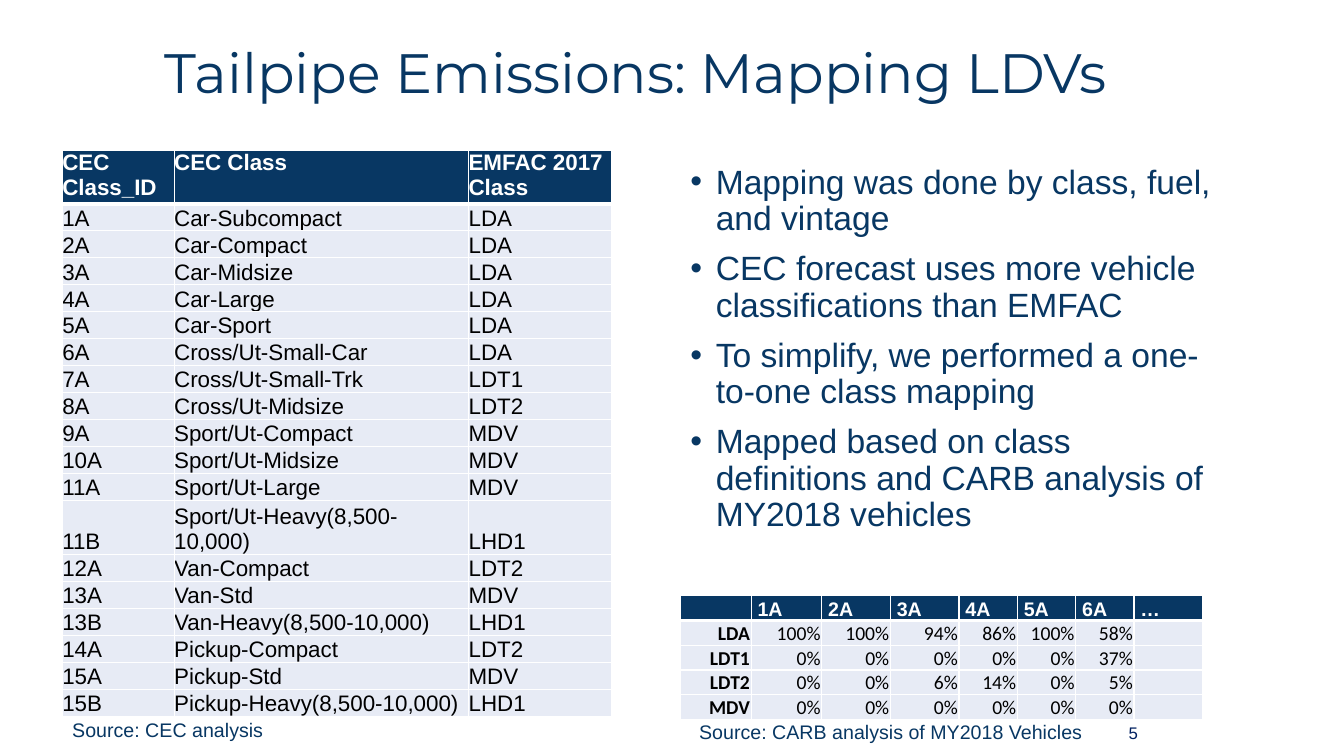
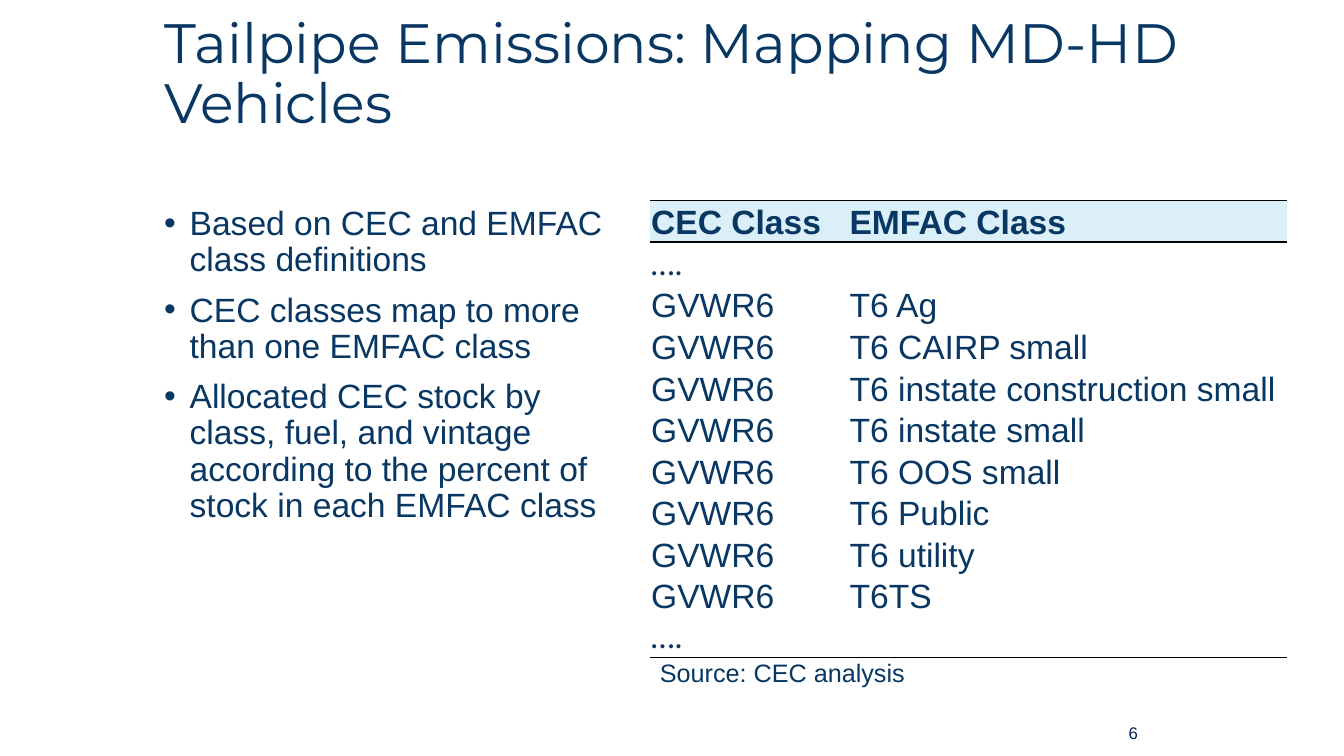
from lxml import etree
from pptx import Presentation
from pptx.dml.color import RGBColor
from pptx.enum.text import MSO_ANCHOR as Anchor, MSO_AUTO_SIZE as AutoSize, PP_ALIGN as Align
from pptx.oxml.ns import qn
from pptx.util import Cm, Pt

NAVY = RGBColor(0x08, 0x37, 0x63)
NUMBER_BLUE = RGBColor(0x00, 0x20, 0x60)
PALE_BLUE = RGBColor(0xE7, 0xEB, 0xF5)
SKY = RGBColor(0xDB, 0xEF, 0xF9)
WHITE = RGBColor(0xFF, 0xFF, 0xFF)
BLACK = RGBColor(0, 0, 0)

FIRST_NUMBER = 5
TITLE_BOX = (3.89, 0.45, 27.66, 2.9)
NUMBER_BOX = (23.93, 17.96, 5, 1.02)
PLAIN_TABLE = "{2D5ABB26-0587-4C30-8999-92F81FD0307C}"

VEHICLE_CLASSES = [
    ("CEC Class_ID", "CEC Class", "EMFAC 2017 Class"),
    ("1A", "Car-Subcompact", "LDA"),
    ("2A", "Car-Compact", "LDA"),
    ("3A", "Car-Midsize", "LDA"),
    ("4A", "Car-Large", "LDA"),
    ("5A", "Car-Sport", "LDA"),
    ("6A", "Cross/Ut-Small-Car", "LDA"),
    ("7A", "Cross/Ut-Small-Trk", "LDT1"),
    ("8A", "Cross/Ut-Midsize", "LDT2"),
    ("9A", "Sport/Ut-Compact", "MDV"),
    ("10A", "Sport/Ut-Midsize", "MDV"),
    ("11A", "Sport/Ut-Large", "MDV"),
    ("11B", "Sport/Ut-Heavy(8,500-10,000)", "LHD1"),
    ("12A", "Van-Compact", "LDT2"),
    ("13A", "Van-Std", "MDV"),
    ("13B", "Van-Heavy(8,500-10,000)", "LHD1"),
    ("14A", "Pickup-Compact", "LDT2"),
    ("15A", "Pickup-Std", "MDV"),
    ("15B", "Pickup-Heavy(8,500-10,000)", "LHD1"),
]
CLASS_SHARES = [
    ("", "1A", "2A", "3A", "4A", "5A", "6A", "…"),
    ("LDA", "100%", "100%", "94%", "86%", "100%", "58%", ""),
    ("LDT1", "0%", "0%", "0%", "0%", "0%", "37%", ""),
    ("LDT2", "0%", "0%", "6%", "14%", "0%", "5%", ""),
    ("MDV", "0%", "0%", "0%", "0%", "0%", "0%", ""),
]
TRUCK_CLASSES = [
    "T6 Ag", "T6 CAIRP small", "T6 instate construction small", "T6 instate small",
    "T6 OOS small", "T6 Public", "T6 utility", "T6TS",
]
TRUCK_ROWS = [("CEC Class", "EMFAC Class"), ("….", ""),
              *(("GVWR6", name) for name in TRUCK_CLASSES), ("….", "")]


def set_all(target, values):
    for name, value in values.items():
        setattr(target, name, value)


def set_font(font, size, color=NAVY, name="Arial", bold=False):
    set_all(font, {"size": Pt(size), "name": name, "bold": bold})
    font.color.rgb = color


def place(shape, box):
    set_all(shape, dict(zip(("left", "top", "width", "height"), map(Cm, box))))


def add_box(page, box, anchor=Anchor.TOP):
    shape = page.shapes.add_textbox(*map(Cm, box))
    set_all(shape.text_frame, {"word_wrap": True, "vertical_anchor": anchor})
    return shape.text_frame


def add_page(deck, title):
    """Add a slide with the shared title and slide number."""
    page = deck.slides.add_slide(deck.slide_layouts[5])
    heading = page.shapes.title
    place(heading, TITLE_BOX)
    set_all(heading.text_frame, {"text": title, "word_wrap": True,
                                 "auto_size": AutoSize.NONE,
                                 "vertical_anchor": Anchor.MIDDLE})
    para = heading.text_frame.paragraphs[0]
    set_all(para, {"alignment": Align.LEFT, "line_spacing": 0.9})
    set_font(para.runs[0].font, 39.6, name="Montserrat")
    add_slide_number(page, FIRST_NUMBER + len(deck.slides) - 1)
    return page


def add_slide_number(page, number):
    para = add_box(page, NUMBER_BOX, Anchor.MIDDLE).paragraphs[0]
    para.alignment = Align.RIGHT
    span = para.add_run()
    span.text = str(number)
    set_font(span.font, 12, NUMBER_BLUE)
    field = span._r
    field.tag = qn("a:fld")
    field.set("id", "{B6F15528-21DE-4FAA-801E-634DDDAF4B2B}")
    field.set("type", "slidenum")


def add_bullets(page, box, lines):
    frame = add_box(page, box)
    for index, line in enumerate(lines):
        para = frame.paragraphs[0] if index == 0 else frame.add_paragraph()
        para.line_spacing = 0.9
        if index:
            para.space_before = Pt(10)
        props = para._p.get_or_add_pPr()
        props.set("marL", str(Cm(0.64)))
        props.set("indent", str(-Cm(0.64)))
        etree.SubElement(props, qn("a:buFont")).set("typeface", "Arial")
        etree.SubElement(props, qn("a:buChar")).set("char", "•")
        span = para.add_run()
        span.text = line
        set_font(span.font, 24)


def add_source(page, box, text, size=14):
    span = add_box(page, box).paragraphs[0].add_run()
    span.text = text
    set_font(span.font, size)


def add_borders(cell, color, widths):
    """Draw the sides in widths, a dict of side letter to points."""
    props = cell._tc.get_or_add_tcPr()
    sides = [side for side in "LRTB" if side in widths]
    for index, side in enumerate(sides):
        line = etree.Element(qn(f"a:ln{side}"), w=str(Pt(widths[side])))
        fill = etree.SubElement(line, qn("a:solidFill"))
        etree.SubElement(fill, qn("a:srgbClr")).set("val", str(color))
        props.insert(index, line)


def fill_cell(cell, text, font, fill=None, anchor=Anchor.BOTTOM, align=Align.LEFT,
              inset=0.03, left=None, line=WHITE, borders=None):
    edge = Cm(inset)
    set_all(cell, {"vertical_anchor": anchor, "margin_top": edge, "margin_right": edge,
                   "margin_left": edge if left is None else Cm(left), "margin_bottom": 0})
    if fill is None:
        cell.fill.background()
    else:
        cell.fill.solid()
        cell.fill.fore_color.rgb = fill
    add_borders(cell, line, borders or {})
    para = cell.text_frame.paragraphs[0]
    para.alignment = align
    if text:
        span = para.add_run()
        span.text = text
        set_font(span.font, **font)
    else:
        etree.SubElement(para._p, qn("a:endParaRPr")).set("sz", str(font["size"] * 100))


def add_grid(page, corner, widths, heights, rows, style):
    """Add a table; style(row, column) gives the format of one cell."""
    box = (*corner, sum(widths), sum(heights))
    frame = page.shapes.add_table(len(rows), len(widths), *map(Cm, box))
    table = frame.table
    frame._element.find(".//" + qn("a:tableStyleId")).text = PLAIN_TABLE
    for column, width in zip(table.columns, widths):
        column.width = Cm(width)
    for row, height in zip(table.rows, heights):
        row.height = Cm(height)
    for r, values in enumerate(rows):
        for c, text in enumerate(values):
            fill_cell(table.cell(r, c), text, **style(r, c))


def banded_style(row):
    """Fill and white rules shared by the two tables with a navy header."""
    if row == 0:
        return {"fill": NAVY, "borders": {"L": 1, "R": 1, "T": 1, "B": 3}}
    return {"fill": PALE_BLUE, "borders": {"L": 1, "R": 1, "B": 1}}


def class_style(row, column):
    header = row == 0
    return {**banded_style(row), "inset": 0,
            "anchor": Anchor.TOP if header else Anchor.BOTTOM,
            "font": {"size": 16, "color": WHITE if header else BLACK, "bold": header}}


def share_style(row, column):
    if row == 0:
        return {**banded_style(row), "left": 0.16,
                "font": {"size": 14, "color": WHITE, "bold": True}}
    return {**banded_style(row), "align": Align.RIGHT,
            "font": {"size": 14, "color": BLACK, "name": "Calibri", "bold": column == 0}}


def truck_style(row, column):
    last = len(TRUCK_ROWS) - 1
    borders = {0: {"T": 1, "B": 1}, last: {"B": 1}}.get(row)
    name = "Calibri" if row in (1, last) else "Arial"
    return {"fill": SKY if row == 0 else None, "line": BLACK, "borders": borders,
            "font": {"size": 24, "name": name, "bold": row == 0}}


def build_light_duty(deck):
    page = add_page(deck, "Tailpipe Emissions: Mapping LDVs")
    add_bullets(page, (17.15, 4.04, 13.82, 10.87), [
        "Mapping was done by class, fuel, and vintage",
        "CEC forecast uses more vehicle classifications than EMFAC",
        "To simplify, we performed a one-to-one class mapping",
        "Mapped based on class definitions and CARB analysis of MY2018 vehicles",
    ])
    two_line_rows = ("CEC Class_ID", "11B")
    heights = [1.25 if row[0] in two_line_rows else 0.68 for row in VEHICLE_CLASSES]
    add_grid(page, (1.57, 3.78), (2.82, 7.42, 3.61), heights, VEHICLE_CLASSES, class_style)
    add_grid(page, (17.15, 15.01), (1.78, 1.78, 1.73, 1.73, 1.47, 1.47, 1.47, 1.73),
             [0.62] * len(CLASS_SHARES), CLASS_SHARES, share_style)
    add_source(page, (17.37, 18.01, 12.04, 0.86), "Source: CARB analysis of MY2018 Vehicles")
    add_source(page, (1.57, 17.96, 7.95, 0.86), "Source: CEC analysis")


def build_heavy_duty(deck):
    page = add_page(deck, "Tailpipe Emissions: Mapping MD-HD Vehicles")
    add_bullets(page, (3.89, 5.08, 11.58, 12.09), [
        "Based on CEC and EMFAC class definitions",
        "CEC classes map to more than one EMFAC class",
        "Allocated CEC stock by class, fuel, and vintage according to the percent of "
        "stock in each EMFAC class",
    ])
    add_grid(page, (16.38, 5.05), (5, 11.05), [0.95] * len(TRUCK_ROWS), TRUCK_ROWS,
             truck_style)
    add_source(page, (16.38, 16.43, 7.95, 1.02), "Source: CEC analysis", 18)


def main():
    deck = Presentation()
    set_all(deck, {"slide_width": Cm(33.87), "slide_height": Cm(19.05)})
    deck.element.set("firstSlideNum", str(FIRST_NUMBER))
    build_light_duty(deck)
    build_heavy_duty(deck)
    deck.save("out.pptx")


if __name__ == "__main__":
    main()
